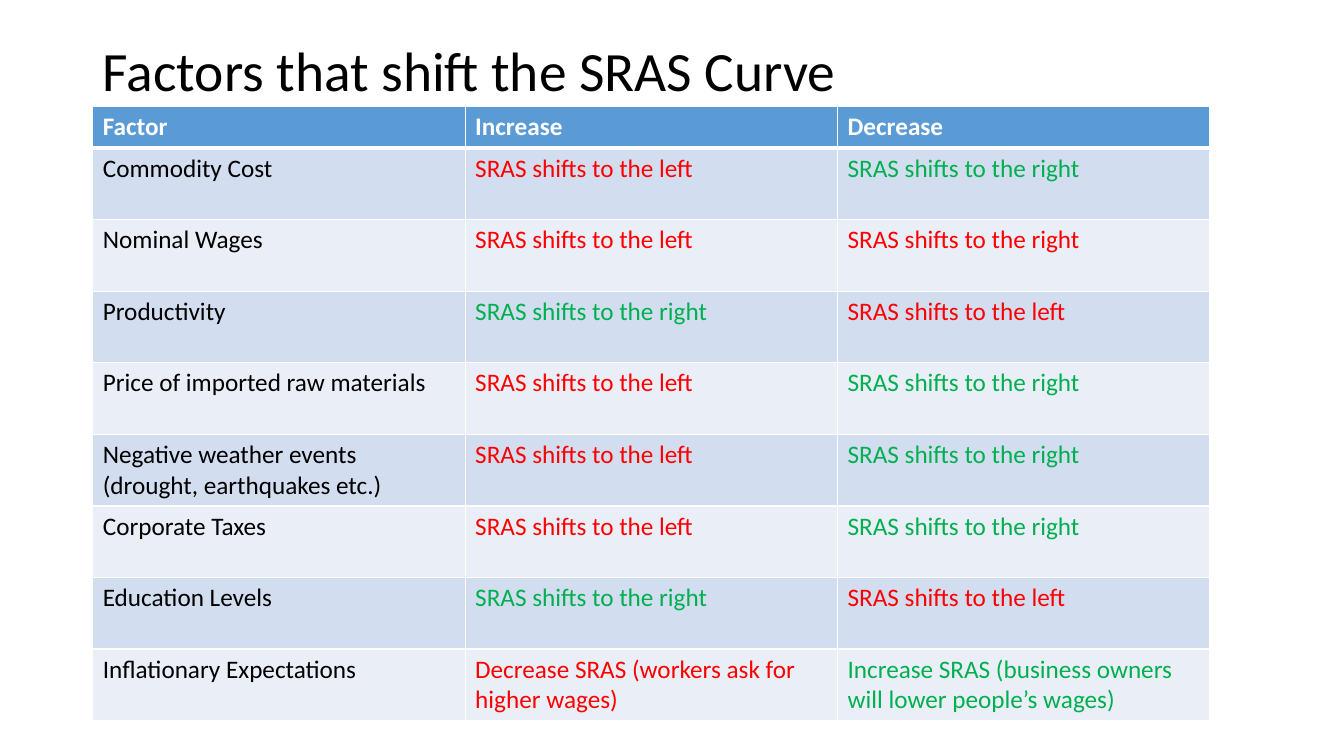
"""Build a slide with a table of the factors that shift the SRAS curve."""
import pptx
import pptx.dml.color
import pptx.enum.text
import pptx.oxml
import pptx.oxml.ns
import pptx.util
from dataclasses import dataclass

TITLE = "Factors that shift the SRAS Curve"
HEADINGS = ("Factor", "Increase", "Decrease")
LEFT = ("SRAS shifts to the left", "red")
RIGHT = ("SRAS shifts to the right", "green")
FACTORS = [
    ("Commodity Cost", LEFT, RIGHT),
    ("Nominal Wages", LEFT, ("SRAS shifts to the right", "red")),
    ("Productivity", RIGHT, LEFT),
    ("Price of imported raw materials", LEFT, RIGHT),
    ("Negative weather events (drought, earthquakes etc.)", LEFT, RIGHT),
    ("Corporate Taxes", LEFT, RIGHT),
    ("Education Levels", RIGHT, LEFT),
    ("Inflationary Expectations",
     ("Decrease SRAS (workers ask for higher wages)", "red"),
     ("Increase SRAS (business owners will lower people’s wages)", "green")),
]


@dataclass(frozen=True)
class Theme:
    """Colours, font and type sizes of the slide."""
    font: str = "Calibri"
    title_size: float = 39.6
    cell_size: float = 18
    black: str = "000000"
    white: str = "FFFFFF"
    red: str = "FF0000"
    green: str = "00B050"
    header: str = "5B9BD5"
    bands: tuple = ("D2DEEF", "EAEFF7")


THEME = Theme()
WIDTH, HEIGHT = 13.33, 7.5
MARGIN = 0.92
TITLE_TOP, TABLE_TOP = 0.4, 1.06
TABLE_WIDTH = 11.08
HEADER_ROW, FACTOR_ROW = 0.41, 0.71


def inches(*lengths):
    """Convert lengths in inches to slide units."""
    return [pptx.util.Inches(length) for length in lengths]


def write(frame, text, *, size=THEME.cell_size, color=THEME.black, bold=False):
    """Put one formatted run of text into a frame."""
    para = frame.paragraphs[0]
    para.alignment = pptx.enum.text.PP_ALIGN.LEFT
    span = para.add_run()
    span.text = text
    span.font.name = THEME.font
    span.font.size = pptx.util.Pt(size)
    span.font.bold = bold
    span.font.color.rgb = pptx.dml.color.RGBColor.from_string(color)
    return para


def draw_borders(cell, **widths):
    """Draw white cell borders with widths in points, keyed by side."""
    for side, width in widths.items():
        cell._tc.get_or_add_tcPr().append(pptx.oxml.parse_xml(
            f'<a:ln{side} {pptx.oxml.ns.nsdecls("a")} w="{pptx.util.Pt(width)}">'
            f'<a:solidFill><a:srgbClr val="{THEME.white}"/></a:solidFill></a:ln{side}>'))


def add_title(page):
    """Place and format the title placeholder."""
    box = page.shapes.title
    box.left, box.top, box.width, box.height = inches(
        MARGIN, TITLE_TOP, 11.5, TABLE_TOP - TITLE_TOP)
    frame = box.text_frame
    frame.word_wrap = True
    frame.auto_size = pptx.enum.text.MSO_AUTO_SIZE.NONE
    frame.vertical_anchor = pptx.enum.text.MSO_ANCHOR.MIDDLE
    write(frame, TITLE, size=THEME.title_size).line_spacing = 0.9


def add_factor_table(page):
    """Add the table with a header row and banded factor rows."""
    heights = [HEADER_ROW] + [FACTOR_ROW] * len(FACTORS)
    table = page.shapes.add_table(
        len(heights), len(HEADINGS),
        *inches(MARGIN, TABLE_TOP, TABLE_WIDTH, sum(heights))).table
    for column in table.columns:
        column.width = pptx.util.Inches(TABLE_WIDTH / len(HEADINGS))
    rows = [[(heading, "white") for heading in HEADINGS]]
    rows += [[(factor, "black"), *effects] for factor, *effects in FACTORS]
    for index, (height, row) in enumerate(zip(heights, rows)):
        table.rows[index].height = pptx.util.Inches(height)
        is_header = index == 0
        fill = THEME.header if is_header else THEME.bands[(index - 1) % 2]
        for column, (text, color) in enumerate(row):
            cell = table.cell(index, column)
            draw_borders(cell, L=1, R=1, T=3 if index == 1 else 1,
                         B=3 if is_header else 1)
            cell.fill.solid()
            cell.fill.fore_color.rgb = pptx.dml.color.RGBColor.from_string(fill)
            write(cell.text_frame, text, color=getattr(THEME, color), bold=is_header)


def main():
    """Build and save the deck."""
    deck = pptx.Presentation()
    deck.slide_width, deck.slide_height = inches(WIDTH, HEIGHT)
    page = deck.slides.add_slide(deck.slide_layouts.get_by_name("Title Only"))
    add_title(page)
    add_factor_table(page)
    deck.save("out.pptx")


if __name__ == "__main__":
    main()
